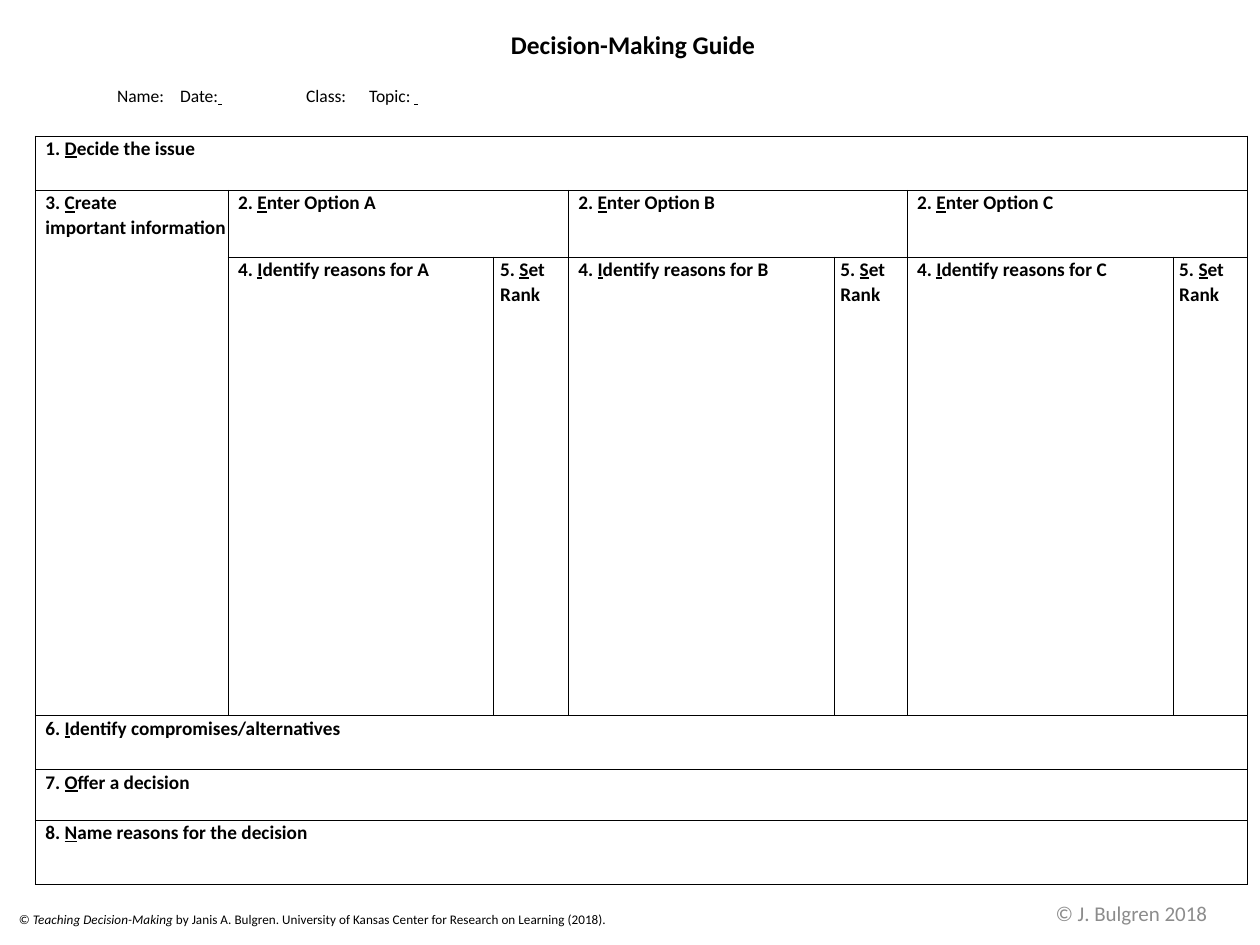
from dataclasses import dataclass

from lxml.etree import SubElement
from pptx import Presentation
from pptx.dml.color import RGBColor
from pptx.enum.text import MSO_ANCHOR as Anchor, MSO_AUTO_SIZE as AutoSize, PP_ALIGN as Align
from pptx.oxml import parse_xml
from pptx.oxml.ns import nsdecls, qn
from pptx.util import Inches, Pt

COLORS = {"ink": "000000", "credit": "8C8C8C"}
FONT = "Calibri"
UNIT = Inches(0.01)  # the slide is a grid of 1000 columns by 750 rows

COLUMNS = [153, 211, 59, 211, 58, 211, 59]
ROWS = [43, 53, 364, 43, 40, 51]
OPTIONS = "ABC"


@dataclass(frozen=True)
class Box:
    left: int
    top: int
    width: int
    height: int

    def lengths(self) -> list[int]:
        return [side * UNIT for side in (self.left, self.top, self.width, self.height)]


@dataclass(frozen=True)
class Entry:
    """Table cell; each line is a paragraph."""
    row: int
    column: int
    lines: tuple[str, ...]
    rows: int = 1
    columns: int = 1
    indent: int = 8


def write(frame, text, *, size, color="ink", bold=False, accent="underline", align=Align.LEFT,
          indent=0, before=0, spacing=None, tabs=()):
    """Add a paragraph; every second part between bars takes the accent."""
    paragraph = frame.paragraphs[0]
    if paragraph.runs:
        paragraph = frame.add_paragraph()
    properties = paragraph._p.get_or_add_pPr()
    properties.set("marL", str(indent * UNIT))
    properties.set("indent", "0")
    if tabs:
        stops = SubElement(properties, qn("a:tabLst"))
        for stop in tabs:
            SubElement(stops, qn("a:tab"), pos=str(stop * UNIT), algn="l")
    paragraph.alignment = align
    paragraph.space_before = Pt(before)
    if spacing:
        paragraph.line_spacing = spacing
    for index, part in enumerate(text.split("|")):
        if not part:
            continue
        run = paragraph.add_run()
        run.text = part
        run.font.name = FONT
        run.font.size = Pt(size)
        run.font.bold = bold
        run.font.color.rgb = RGBColor.from_string(COLORS[color])
        if index % 2:
            setattr(run.font, accent, True)


def add_text_area(slide, box: Box, tight: bool = True):
    frame = slide.shapes.add_textbox(*box.lengths()).text_frame
    frame.word_wrap = True
    if tight:
        frame.margin_left = frame.margin_right = frame.margin_bottom = 0
        frame.margin_top = UNIT
        frame.auto_size = AutoSize.SHAPE_TO_FIT_TEXT
    else:
        frame.vertical_anchor = Anchor.MIDDLE
    return frame


def outline(cell) -> None:
    cell.margin_left = cell.margin_right = cell.margin_top = cell.margin_bottom = 0
    cell.fill.background()
    properties = cell._tc.get_or_add_tcPr()
    for position, side in enumerate("LRTB"):
        properties.insert(position, parse_xml(
            f'<a:ln{side} {nsdecls("a")} w="{Pt(0.5)}"><a:solidFill>'
            f'<a:srgbClr val="{COLORS["ink"]}"/></a:solidFill></a:ln{side}>'))


def add_guide(slide, box: Box, entries: list[Entry]) -> None:
    table = slide.shapes.add_table(len(ROWS), len(COLUMNS), *box.lengths()).table
    table.first_row = table.horz_banding = False
    for column, width in zip(table.columns, COLUMNS):
        column.width = width * UNIT
    for row, height in zip(table.rows, ROWS):
        row.height = height * UNIT
    for cell in table.iter_cells():
        outline(cell)
    for entry in entries:
        cell = table.cell(entry.row, entry.column)
        if entry.rows * entry.columns > 1:
            cell.merge(table.cell(entry.row + entry.rows - 1, entry.column + entry.columns - 1))
        for line in entry.lines:
            write(cell.text_frame, line, size=11, bold=True, indent=entry.indent,
                  spacing=Pt(14.1))


def guide_entries() -> list[Entry]:
    full_width = {
        0: "1. |D|ecide the issue",
        3: "6. |I|dentify compromises/alternatives",
        4: "7. |O|ffer a decision",
        5: "8. |N|ame reasons for the decision",
    }
    entries = [Entry(row, 0, (line,), columns=len(COLUMNS)) for row, line in full_width.items()]
    entries.append(Entry(1, 0, ("3. |C|reate", "important information"), rows=2))
    for index, option in enumerate(OPTIONS):
        column = 1 + 2 * index
        entries += [
            Entry(1, column, (f"2. |E|nter Option {option}",), columns=2),
            Entry(2, column, (f"4. |I|dentify reasons for {option}",)),
            Entry(2, column + 1, ("5. |S|et", "Rank"), indent=5),
        ]
    return entries


def main() -> None:
    deck = Presentation()
    deck.slide_width, deck.slide_height = 1000 * UNIT, 750 * UNIT
    slide = deck.slides.add_slide(deck.slide_layouts[6])

    heading = add_text_area(slide, Box(92, 22, 804, 62))
    write(heading, "Decision-Making Guide", size=14.5, bold=True, align=Align.CENTER, indent=17)
    write(heading, "Name:|\t|Date:| \t|\tClass:|\t|Topic: | \t", size=10, indent=1,
          before=14.6, tabs=(222, 383, 402, 589, 803))

    add_guide(slide, Box(28, 108, sum(COLUMNS), sum(ROWS)), guide_entries())

    source = add_text_area(slide, Box(14, 722, 495, 14))
    write(source, "© |Teaching Decision-Making| by Janis A. Bulgren. "
          "University of Kansas Center for Research on Learning (2018).",
          size=7.5, accent="italic", indent=1)
    credit = add_text_area(slide, Box(806, 705, 184, 40), tight=False)
    write(credit, "© J. Bulgren 2018", size=12, color="credit", align=Align.CENTER)

    deck.save("out.pptx")


if __name__ == "__main__":
    main()
